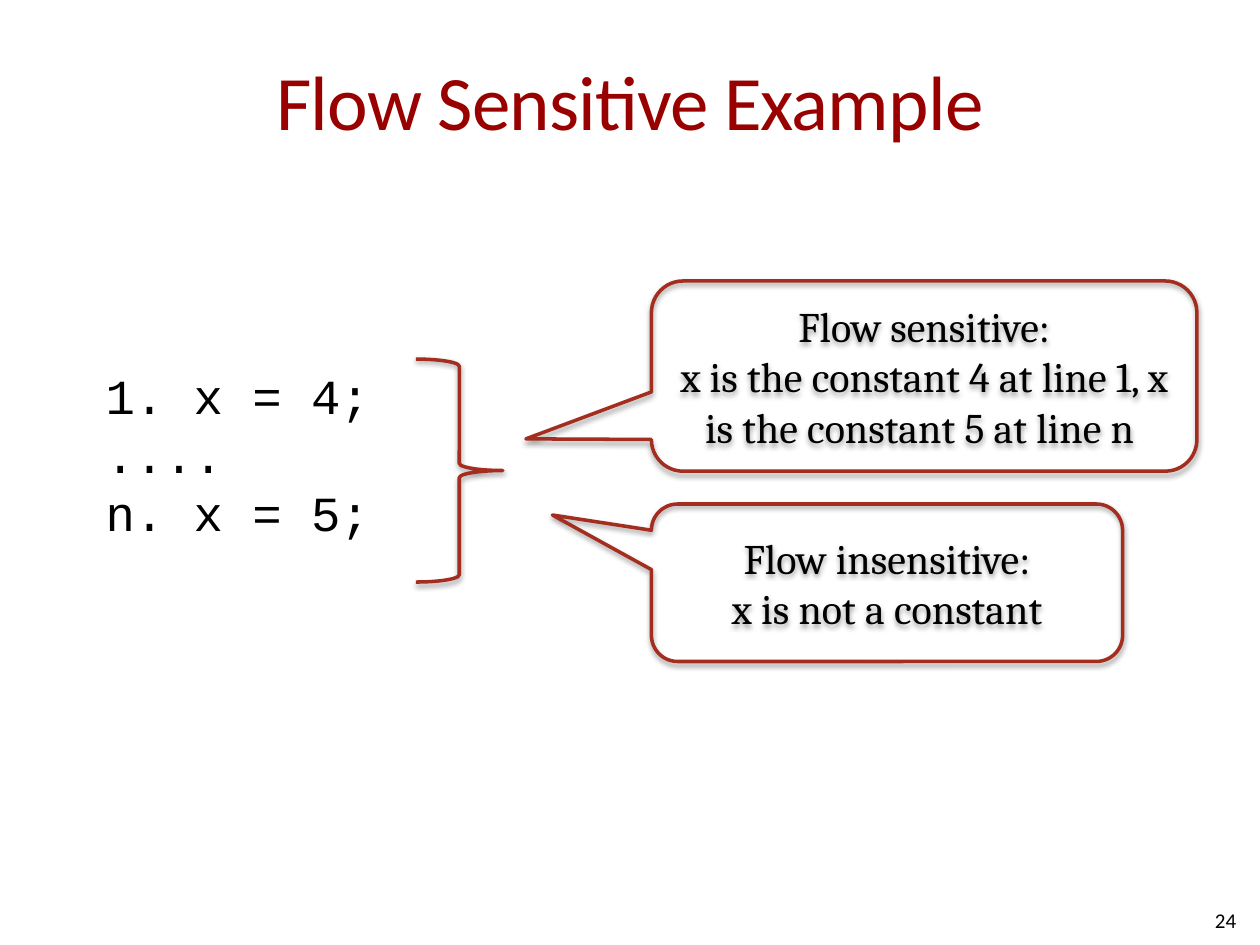
from lxml import etree
from pptx import Presentation
from pptx.dml.color import RGBColor
from pptx.enum.shapes import MSO_SHAPE
from pptx.enum.text import MSO_ANCHOR, PP_ALIGN
from pptx.oxml.ns import qn
from pptx.util import Inches, Pt

CALLOUT = MSO_SHAPE.ROUNDED_RECTANGULAR_CALLOUT
BRACE = MSO_SHAPE.RIGHT_BRACE
MIDDLE = MSO_ANCHOR.MIDDLE
LEFT, CENTER, RIGHT = PP_ALIGN.LEFT, PP_ALIGN.CENTER, PP_ALIGN.RIGHT

COLORS = {"title": "990000", "outline": "A32D1F", "text": "000000", "page": "FFFFFF"}


def color(name):
    return RGBColor.from_string(COLORS[name])


def place(item, box):
    item.left, item.top, item.width, item.height = (Inches(length) for length in box)


def add_span(para, text, font, size, tint="text"):
    span = para.add_run()
    span.text = text
    span.font.name = font
    span.font.size = Pt(size)
    span.font.color.rgb = color(tint)
    return span


def add_shadow(shape):
    """Give the shape a soft black shadow straight below it."""
    shape.shadow.inherit = False
    effects = shape._element.spPr.find(qn("a:effectLst"))
    shadow = etree.SubElement(effects, qn("a:outerShdw"), blurRad="40000",
                              dist="20000", dir="5400000", rotWithShape="0")
    black = etree.SubElement(shadow, qn("a:srgbClr"), val=COLORS["text"])
    etree.SubElement(black, qn("a:alpha"), val="38000")


def add_outline(page, kind, box):
    """Add an unfilled, shadowed shape with the slide's red outline."""
    shape = page.shapes.add_shape(kind, *(Inches(length) for length in box))
    shape.fill.background()
    shape.line.color.rgb = color("outline")
    shape.line.width = Pt(2)
    add_shadow(shape)
    return shape


def add_title(page, box, text):
    title = page.shapes.title
    place(title, box)
    frame = title.text_frame
    frame.margin_left = frame.margin_right = 0
    frame.vertical_anchor = MIDDLE
    frame.paragraphs[0].alignment = CENTER
    span = add_span(frame.paragraphs[0], text, "Calibri", 44, "title")
    span.font._element.set("spc", "-50")


def add_text(page, box, lines, font, size, align=LEFT, anchor=MSO_ANCHOR.TOP):
    frame = page.shapes.add_textbox(*(Inches(length) for length in box)).text_frame
    frame.word_wrap = True
    frame.vertical_anchor = anchor
    for number, line in enumerate(lines):
        para = frame.add_paragraph() if number else frame.paragraphs[0]
        para.alignment = align
        add_span(para, line, font, size)


def add_callout(page, box, pointer, heading, finding):
    """Add a callout whose pointer is a share of the box, from its centre."""
    callout = add_outline(page, CALLOUT, box)
    callout.adjustments[0], callout.adjustments[1] = pointer
    frame = callout.text_frame
    frame.word_wrap = True
    frame.vertical_anchor = MIDDLE
    para = frame.paragraphs[0]
    para.alignment = CENTER
    add_span(para, heading, "Cambria", 24)
    para.add_line_break()
    add_span(para, finding, "Cambria", 24)


def build_example(page, width, height):
    page.background.fill.solid()
    page.background.fill.fore_color.rgb = color("page")
    add_title(page, (0.05 * width, 0.17, 0.9 * width, 1.25), "Flow Sensitive Example")

    code_top, callout_left = 0.38 * height, 5.17
    add_text(page, (0.74, code_top, 3.26, 1.51),
             ["1. x = 4;", "....", "n. x = 5;"], "Courier New", 28)
    add_callout(page, (callout_left, 2.23, 4.33, 1.51), (-0.73, 0.33),
                "Flow sensitive:",
                "x is the constant 4 at line 1, x is the constant 5 at line n ")
    add_callout(page, (callout_left, 4, 3.74, 1.25), (-0.71, -0.43),
                "Flow insensitive:", "x is not a constant")
    add_outline(page, BRACE, (3.3, code_top, 0.69, 1.77))
    add_text(page, (7.58, 7.1, 2.33, 0.4), ["24"], "Calibri", 12, RIGHT, MIDDLE)


def main():
    width, height = 10, 7.5
    deck = Presentation()
    deck.slide_width, deck.slide_height = Inches(width), Inches(height)
    title_only = deck.slide_layouts[5]
    build_example(deck.slides.add_slide(title_only), width, height)
    deck.save("out.pptx")


if __name__ == "__main__":
    main()
